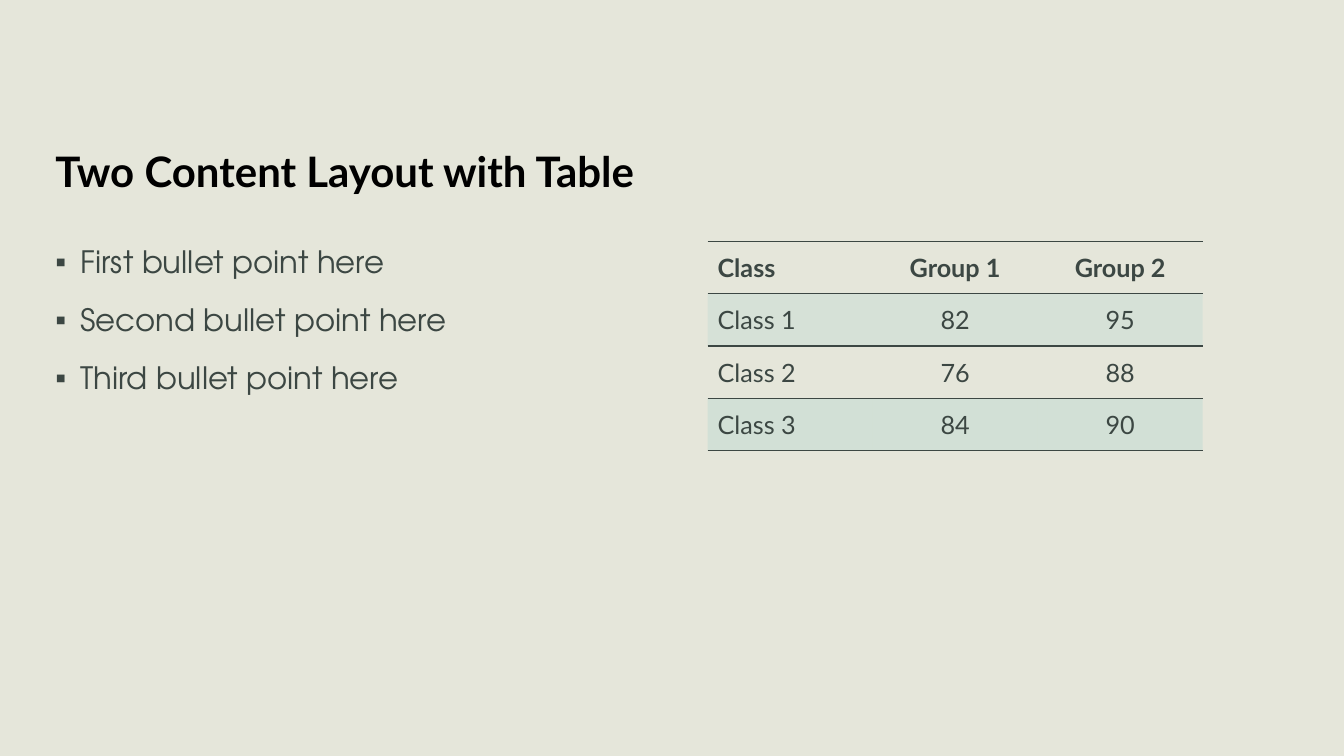
from lxml.etree import SubElement
from pptx import Presentation
from pptx.dml.color import RGBColor
from pptx.enum.text import MSO_ANCHOR as Anchor, MSO_AUTO_SIZE as AutoSize, PP_ALIGN as Align
from pptx.oxml import parse_xml
from pptx.oxml.ns import nsdecls, qn
from pptx.util import Cm, Pt

BACKGROUND = RGBColor(0xE5, 0xE6, 0xDA)
BLACK = RGBColor(0x00, 0x00, 0x00)
SLATE = RGBColor(0x3C, 0x47, 0x43)
TEAL = RGBColor(0x86, 0xCA, 0xC8)

TITLE_FONT = {"name": "Lato", "size": Pt(30), "bold": True}
BULLET_FONT = {"name": "TeX Gyre Adventor", "size": Pt(22), "bold": False}
TABLE_FONT = {"name": "Lato", "size": Pt(18)}

TITLE_BOX = (Cm(1.14), Cm(3.2), Cm(31.78), Cm(2.31))
BULLET_BOX = (Cm(1.14), Cm(6), Cm(15.8), Cm(12.3))
TABLE_BOX = (Cm(17.83), Cm(6.08), Cm(12.48), Cm(5.28))

BULLETS = ["First bullet point here", "Second bullet point here", "Third bullet point here"]
SCORES = [
    ["Class", "Group 1", "Group 2"],
    ["Class 1", "82", "95"],
    ["Class 2", "76", "88"],
    ["Class 3", "84", "90"],
]
RULED_EDGES = {0, 1, 2, 4}
ROW_OPACITY = {1: 15, 3: 20}
PLAIN_TABLE_STYLE = "{2D5ABB26-0587-4C30-8999-92F81FD0307C}"


def set_font(font, color, **values):
    for name, value in values.items():
        setattr(font, name, value)
    font.color.rgb = color


def place(shape, box):
    for name, value in zip(("left", "top", "width", "height"), box):
        setattr(shape, name, value)


def add_title(slide, box, text):
    title = slide.shapes.title
    place(title, box)
    frame = title.text_frame
    frame.text = text
    frame.auto_size = AutoSize.NONE
    frame.vertical_anchor = Anchor.MIDDLE
    para = frame.paragraphs[0]
    para.alignment = Align.LEFT
    para.line_spacing = 0.95
    set_font(para.font, BLACK, **TITLE_FONT)


def add_bullets(slide, box, lines):
    body = slide.placeholders[1]
    place(body, box)
    frame = body.text_frame
    frame.text = "\n".join(lines)
    frame.auto_size = AutoSize.NONE
    for index, para in enumerate(frame.paragraphs):
        properties = para._p.get_or_add_pPr()
        properties.set("marL", str(Cm(0.63)))
        properties.set("indent", str(Cm(-0.63)))
        SubElement(properties, qn("a:buChar"), char="▪")
        para.space_before = Pt(15 if index else 0)
        set_font(para.font, SLATE, **BULLET_FONT)


def fill_cell(cell, opacity):
    """Tint the cell with translucent teal, or leave it clear without an opacity."""
    if opacity is None:
        cell.fill.background()
        return
    cell.fill.solid()
    cell.fill.fore_color.rgb = TEAL
    color = cell._tc.tcPr.find(f".//{qn('a:srgbClr')}")
    SubElement(color, qn("a:alpha"), val=str(opacity * 1000))


def rule_cell(cell, row):
    """Draw the ruled edges above and below the cell, ahead of its fill."""
    sides = [tag for tag, edge in (("lnT", row), ("lnB", row + 1)) if edge in RULED_EDGES]
    for position, tag in enumerate(sides):
        line = parse_xml(
            f'<a:{tag} {nsdecls("a")} w="{Pt(1)}"><a:solidFill>'
            f'<a:srgbClr val="{SLATE}"/></a:solidFill></a:{tag}>'
        )
        cell._tc.tcPr.insert(position, line)


def add_score_table(slide, box, rows):
    table = slide.shapes.add_table(len(rows), len(rows[0]), *box).table
    table.horz_banding = False
    table._tbl.tblPr.find(qn("a:tableStyleId")).text = PLAIN_TABLE_STYLE
    for row, values in enumerate(rows):
        for column, value in enumerate(values):
            cell = table.cell(row, column)
            cell.text = value
            cell.vertical_anchor = Anchor.MIDDLE
            para = cell.text_frame.paragraphs[0]
            para.alignment = Align.CENTER if column else Align.LEFT
            set_font(para.font, SLATE, bold=row == 0, **TABLE_FONT)
            fill_cell(cell, ROW_OPACITY.get(row))
            rule_cell(cell, row)


def main():
    deck = Presentation()
    deck.slide_width, deck.slide_height = Cm(33.87), Cm(19.05)
    slide = deck.slides.add_slide(deck.slide_layouts.get_by_name("Title and Content"))
    slide.background.fill.solid()
    slide.background.fill.fore_color.rgb = BACKGROUND
    add_title(slide, TITLE_BOX, "Two Content Layout with Table")
    add_bullets(slide, BULLET_BOX, BULLETS)
    add_score_table(slide, TABLE_BOX, SCORES)
    deck.save("out.pptx")


if __name__ == "__main__":
    main()
